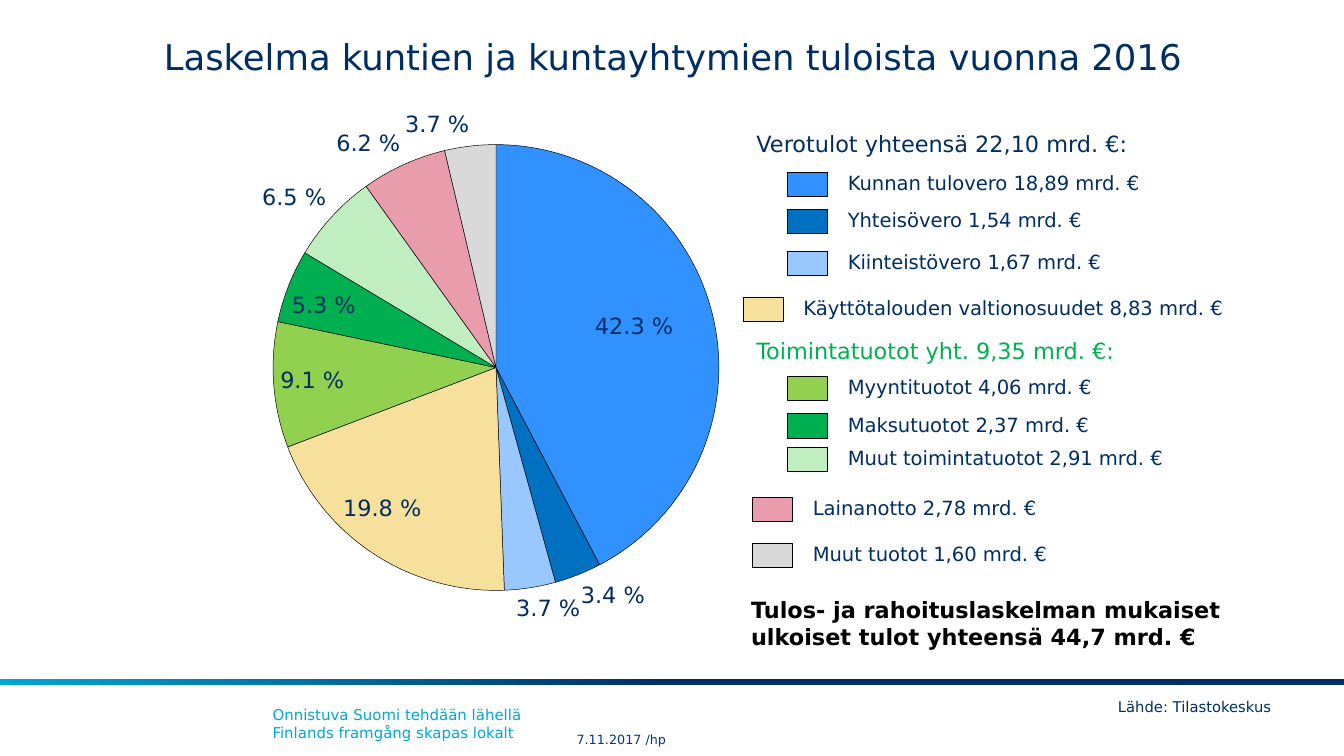
import pptx
import pptx.chart.data
import pptx.dml.color
import pptx.enum.chart
import pptx.enum.shapes
import pptx.enum.text
import pptx.oxml
import pptx.util

Inches = pptx.util.Inches
Pt = pptx.util.Pt
RGBColor = pptx.dml.color.RGBColor
MSO_ANCHOR = pptx.enum.text.MSO_ANCHOR
MSO_AUTO_SIZE = pptx.enum.text.MSO_AUTO_SIZE
LABEL_POSITION = pptx.enum.chart.XL_LABEL_POSITION

NAVY = RGBColor(0x00, 0x2E, 0x63)
DATE_BLUE = RGBColor(0x00, 0x38, 0x82)
CYAN = RGBColor(0x00, 0xA6, 0xD6)
BLACK = RGBColor(0x00, 0x00, 0x00)
BLUE = RGBColor(0x31, 0x91, 0xFF)
DEEP_BLUE = RGBColor(0x00, 0x70, 0xC0)
PALE_BLUE = RGBColor(0x98, 0xC8, 0xFF)
SAND = RGBColor(0xF7, 0xE0, 0x9C)
LIME = RGBColor(0x92, 0xD0, 0x50)
GREEN = RGBColor(0x00, 0xB0, 0x50)
MINT = RGBColor(0xC0, 0xEE, 0xC1)
PINK = RGBColor(0xE8, 0x9C, 0xAC)
GREY = RGBColor(0xD9, 0xD9, 0xD9)

# Legend text, share of income, colour, left and top of the swatch, text width
INCOME = [
    ("Kunnan tulovero 18,89 mrd. €", 0.423, BLUE, 5.86, 1.28, 2.45),
    ("Yhteisövero 1,54 mrd. €", 0.034, DEEP_BLUE, 5.86, 1.56, 2),
    ("Kiinteistövero 1,67 mrd. €", 0.037, PALE_BLUE, 5.86, 1.87, 2.15),
    ("Käyttötalouden valtionosuudet 8,83 mrd. €", 0.198, SAND, 5.53, 2.21, 3.49),
    ("Myyntituotot 4,06 mrd. €", 0.091, LIME, 5.86, 2.8, 2.07),
    ("Maksutuotot 2,37 mrd. €", 0.053, GREEN, 5.86, 3.08, 2.05),
    ("Muut toimintatuotot 2,91 mrd. €", 0.065, MINT, 5.86, 3.33, 2.71),
    ("Lainanotto 2,78 mrd. €", 0.062, PINK, 5.6, 3.7, 1.92),
    ("Muut tuotot 1,60 mrd. €", 0.037, GREY, 5.6, 4.04, 2),
]


def manual_layout(**values):
    """Return a c:layout element with the given children in order."""
    children = "".join(f'<c:{k} val="{v}"/>' for k, v in values.items())
    ns = "http://schemas.openxmlformats.org/drawingml/2006/chart"
    return pptx.oxml.parse_xml(
        f'<c:layout xmlns:c="{ns}"><c:manualLayout>{children}'
        "</c:manualLayout></c:layout>")


class SlideBuilder:
    font = "DejaVu Sans"

    def __init__(self, slide):
        self.s = slide

    def style(self, font, size, color, bold=False):
        font.name, font.size, font.bold = self.font, Pt(size), bold
        font.color.rgb = color

    def text(self, text, x, y, w, h, size=10.5, color=NAVY, bold=False,
             wrap=False, anchor=MSO_ANCHOR.TOP, inset=(0.1, 0.05)):
        """Add a text box; each line of text becomes a paragraph."""
        sp = self.s.shapes.add_textbox(Inches(x), Inches(y), Inches(w), Inches(h))
        tf = sp.text_frame
        tf.word_wrap, tf.vertical_anchor = wrap, anchor
        if not wrap:
            tf.auto_size = MSO_AUTO_SIZE.SHAPE_TO_FIT_TEXT
        tf.margin_left = tf.margin_right = Inches(inset[0])
        tf.margin_top = tf.margin_bottom = Inches(inset[1])
        tf.text = text
        for p in tf.paragraphs:
            for r in p.runs:
                self.style(r.font, size, color, bold)

    def rect(self, x, y, w, h):
        sp = self.s.shapes.add_shape(
            pptx.enum.shapes.MSO_SHAPE.RECTANGLE,
            Inches(x), Inches(y), Inches(w), Inches(h))
        sp.shadow.inherit = False
        return sp

    def swatch(self, x, y, color):
        sp = self.rect(x, y, 0.3, 0.18)
        sp.fill.solid()
        sp.fill.fore_color.rgb = color
        sp.line.color.rgb = BLACK
        sp.line.width = Pt(0.5)

    def gradient_bar(self, x, y, w, h, stops, angle):
        sp = self.rect(x, y, w, h)
        sp.line.fill.background()
        sp.fill.gradient()
        sp.fill.gradient_angle = angle
        for stop, (position, color) in zip(sp.fill.gradient_stops, stops):
            stop.position = position
            stop.color.rgb = color

    def pie(self, x, y, w, h, values, colors):
        data = pptx.chart.data.CategoryChartData()
        data.categories = [str(i + 1) for i in range(len(values))]
        data.add_series("Series 1", values)
        chart = self.s.shapes.add_chart(
            pptx.enum.chart.XL_CHART_TYPE.PIE,
            Inches(x), Inches(y), Inches(w), Inches(h), data).chart
        chart.has_legend = chart.has_title = False
        self.style(chart.font, 12, NAVY)
        plot = chart.plots[0]
        plot.vary_by_categories = True
        series = plot.series[0]
        for i, color in enumerate(colors):
            fmt = series.points[i].format
            fmt.fill.solid()
            fmt.fill.fore_color.rgb = color
            fmt.line.color.rgb = BLACK
            fmt.line.width = Pt(0.25)
        labels = series.data_labels
        labels.show_value = True
        labels.number_format = r"0.0\ %"
        labels.number_format_is_linked = False
        labels.position = LABEL_POSITION.BEST_FIT
        self.style(labels.font, 12, NAVY)

        # Pull the label of the largest slice towards the centre
        label = series.points[0].data_label
        self.style(label.font, 12, NAVY)
        label.position = LABEL_POSITION.BEST_FIT
        series._element.xpath("c:dLbls/c:dLbl/c:idx")[0].addnext(
            manual_layout(x=-0.16, y=0.05))

        area = chart._chartSpace.chart.plotArea
        for old in area.xpath("c:layout"):
            area.remove(old)
        area.insert(0, manual_layout(
            layoutTarget="inner", xMode="edge", yMode="edge",
            x=0.21, y=0.09, w=0.57, h=0.82))


def main():
    prs = pptx.Presentation()
    prs.slide_width, prs.slide_height = Inches(10), Inches(10 * 9 / 16)
    b = SlideBuilder(prs.slides.add_slide(prs.slide_layouts[6]))

    b.gradient_bar(0, 5.05, 10, 0.05, [(0.5, NAVY), (1, CYAN)], 180)
    b.text("Onnistuva Suomi tehdään lähellä\vFinlands framgång skapas lokalt",
           1.93, 5.2, 6.54, 0.37, size=8, color=CYAN, wrap=True)
    b.text("7.11.2017 /hp", 4.29, 5.41, 1.11, 0.18, size=6.8, color=DATE_BLUE,
           wrap=True, anchor=MSO_ANCHOR.MIDDLE, inset=(0, 0))
    b.text("Laskelma kuntien ja kuntayhtymien tuloista vuonna 2016",
           1.22, 0.1, 7.76, 0.53, size=19, wrap=True,
           anchor=MSO_ANCHOR.BOTTOM, inset=(0, 0.05))
    b.pie(0.81, 0.69, 5.82, 4.09, [row[1] for row in INCOME],
          [row[2] for row in INCOME])
    b.text("Lähde: Tilastokeskus", 8.22, 5.14, 1.37, 0.23, size=7.9)

    for name, _, color, x, y, width in INCOME:
        b.swatch(x, y, color)
        b.text(name, x + 0.35, y - 0.06, width, 0.28)

    b.text("Verotulot yhteensä 22,10 mrd. €:", 5.53, 0.92, 3.05, 0.3, size=12)
    b.text("Toimintatuotot yht. 9,35 mrd. €:", 5.53, 2.46, 2.97, 0.3,
           size=12, color=GREEN)
    b.text("Tulos- ja rahoituslaskelman mukaiset\n"
           "ulkoiset tulot yhteensä 44,7 mrd. €",
           5.49, 4.39, 3.76, 0.5, size=12, color=BLACK, bold=True)
    prs.save("out.pptx")


if __name__ == "__main__":
    main()
